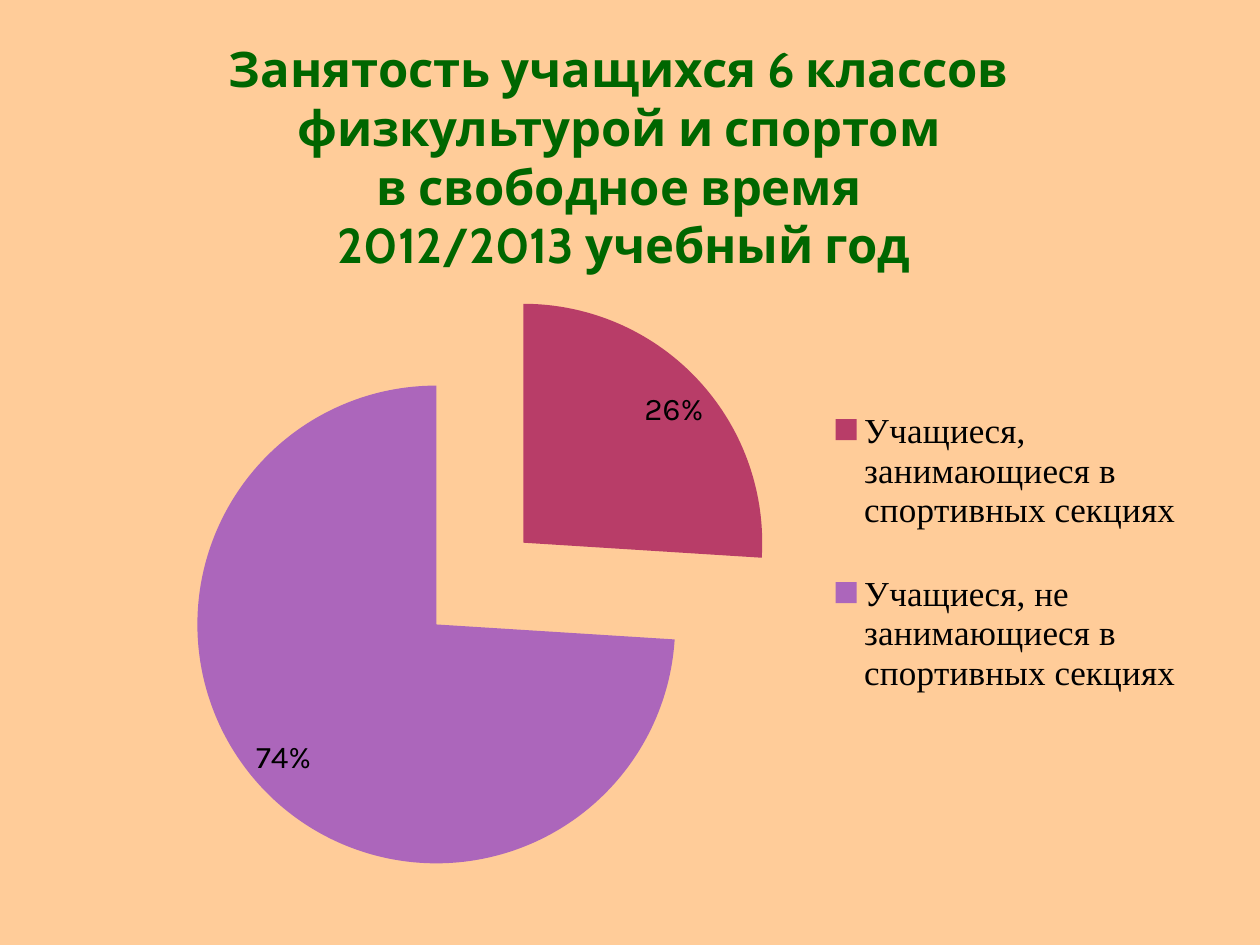
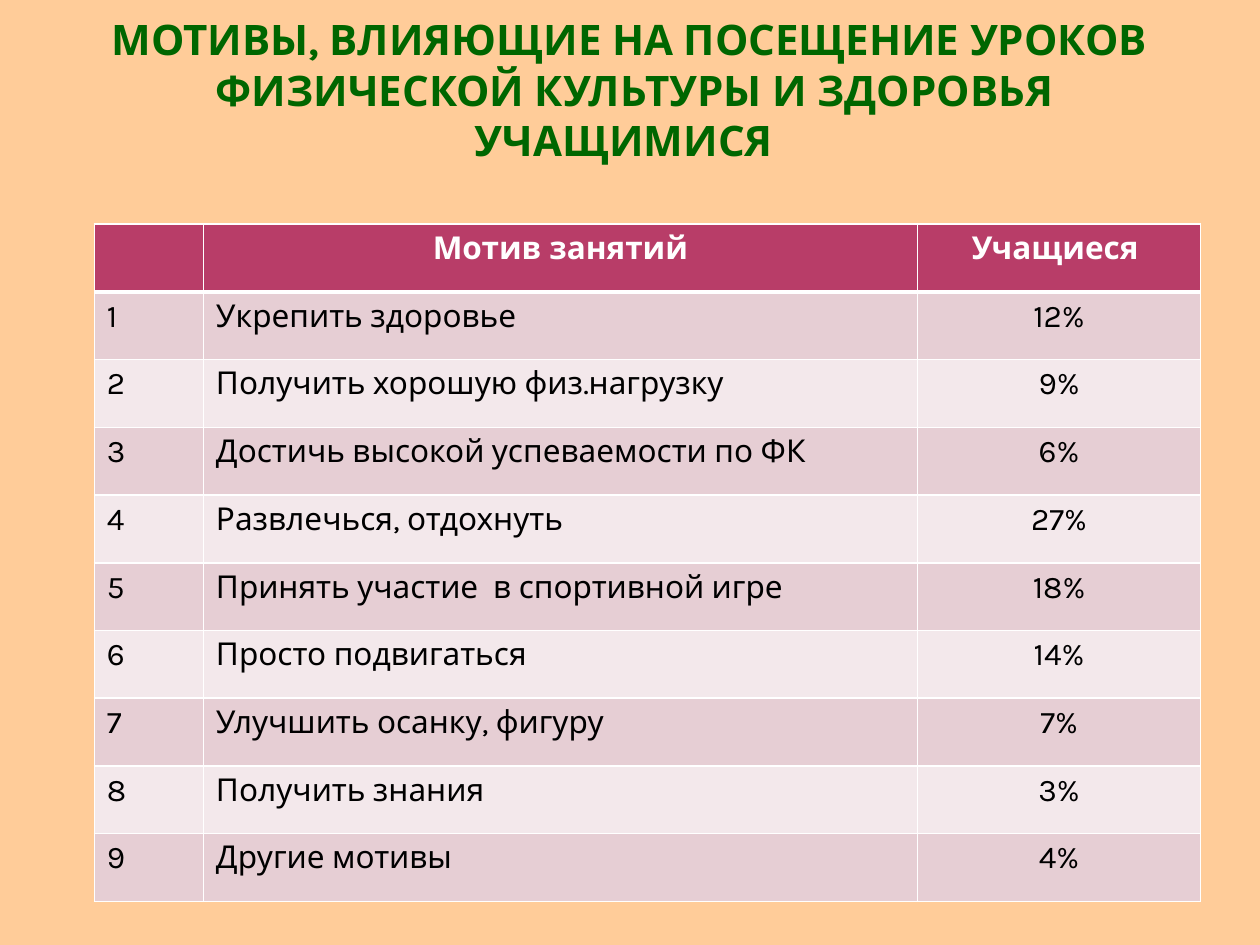
"""Build two slides on pupils' sport: a pie of participation and a table of motives."""
from lxml import etree
from pptx import Presentation
from pptx import util as u
from pptx.chart import data as chart_data
from pptx.dml import color
from pptx.enum import chart as chart_enum, text
from pptx.oxml import ns, parse_xml

COLOURS = {
    "background": "FFCC99",
    "title": "006600",
    "text": "000000",
    "white": "FFFFFF",
    "berry": "B83D68",
    "violet": "AC66BB",
    "odd_row": "E6CED4",
    "even_row": "F3E8EB",
}
RGB = {name: color.RGBColor.from_string(value) for name, value in COLOURS.items()}


def set_font(font, name, size, colour, bold=False):
    font.name = name
    font.size = u.Pt(size)
    font.bold = bold
    font.color.rgb = RGB[colour]


def add_titled_page(deck, title, top, width, height, name, size):
    page = deck.slides.add_slide(deck.slide_layouts[6])
    page.background.fill.solid()
    page.background.fill.fore_color.rgb = RGB["background"]
    box = page.shapes.add_textbox(u.Cm(1.27), u.Cm(top), u.Cm(width), u.Cm(height))
    frame = box.text_frame
    frame.word_wrap = True
    frame.vertical_anchor = text.MSO_ANCHOR.BOTTOM
    frame.margin_left = frame.margin_right = u.Cm(0.13)
    frame.margin_top = frame.margin_bottom = 0
    para = frame.paragraphs[0]
    para.text = title
    para.alignment = text.PP_ALIGN.CENTER
    set_font(para.font, name, size, "title", bold=True)
    return page


deck = Presentation()
deck.slide_width, deck.slide_height = u.Cm(25.4), u.Cm(19.05)

page = add_titled_page(
    deck,
    "Занятость учащихся 6 классов \vфизкультурой и спортом \v"
    "в свободное время \v2012/2013 учебный год",
    0.31, 22.63, 5.21, "Cabin", 28,
)
shares = chart_data.CategoryChartData(number_format="0%")
shares.categories = [
    "Учащиеся, занимающиеся в спортивных секциях",
    "Учащиеся, не занимающиеся в спортивных секциях",
]
shares.add_series("Series 1", (0.26, 0.74))
pie = page.shapes.add_chart(
    chart_enum.XL_CHART_TYPE.PIE, u.Cm(1.38), u.Cm(4.5), u.Cm(23.04), u.Cm(13.84), shares
).chart
pie.has_title = False
set_font(pie.font, "Karla", 18, "text")
pie.has_legend = True
pie.legend.position = chart_enum.XL_LEGEND_POSITION.RIGHT
pie.legend.include_in_layout = False
set_font(pie.legend.font, "Times New Roman", 20, "text")

pie.plots[0].vary_by_categories = True
series = pie.plots[0].series[0]
labels = series.data_labels
labels.show_value = True
labels.show_percentage = False
labels.number_format = "0%"
labels.number_format_is_linked = False
labels.position = chart_enum.XL_LABEL_POSITION.INSIDE_END
set_font(labels.font, "Karla", 18, "text")

layouts = []
for index, (name, shift) in enumerate((("berry", (0.01, 0.01)), ("violet", (-0.01, -0.01)))):
    point = series.points[index]
    point.format.fill.solid()
    point.format.fill.fore_color.rgb = RGB[name]
    point.format.line.fill.background()
    point.data_label.position = chart_enum.XL_LABEL_POSITION.INSIDE_END
    set_font(point.data_label.font, "Karla", 18, "text")
    label = labels._element.findall(ns.qn("c:dLbl"))[index]
    layouts.append((label, "c:idx", "", zip("xy", shift)))
explosion = etree.Element(ns.qn("c:explosion"), val="25")
series._element.find(ns.qn("c:dPt")).addprevious(explosion)

edges = '<c:xMode val="edge"/><c:yMode val="edge"/>'
plot_area = pie._chartSpace.chart.plotArea
layouts += [
    (plot_area, None, '<c:layoutTarget val="inner"/>' + edges, zip("xywh", (0.07, 0.09, 0.58, 0.87))),
    (pie.legend._element, "c:legendPos", edges, zip("xywh", (0.66, 0.21, 0.32, 0.54))),
]
for parent, previous, modes, values in layouts:
    for old_layout in parent.findall(ns.qn("c:layout")):
        parent.remove(old_layout)
    sizes = "".join(f'<c:{key} val="{value}"/>' for key, value in values)
    layout = parse_xml(
        f'<c:layout {ns.nsdecls("c")}><c:manualLayout>{modes}{sizes}</c:manualLayout></c:layout>'
    )
    if previous:
        parent.find(ns.qn(previous)).addnext(layout)
    else:
        parent.insert(0, layout)

page = add_titled_page(
    deck,
    "МОТИВЫ, ВЛИЯЮЩИЕ НА ПОСЕЩЕНИЕ УРОКОВ\v ФИЗИЧЕСКОЙ КУЛЬТУРЫ И ЗДОРОВЬЯ УЧАЩИМИСЯ ",
    0.54, 22.83, 2.79, "Karla", 24,
)
motives = [
    ("Укрепить здоровье", 12),
    ("Получить хорошую физ.нагрузку", 9),
    ("Достичь высокой успеваемости по ФК", 6),
    ("Развлечься, отдохнуть", 27),
    ("Принять участие  в спортивной игре", 18),
    ("Просто подвигаться", 14),
    ("Улучшить осанку, фигуру", 7),
    ("Получить знания", 3),
    ("Другие мотивы", 4),
]
rows = [("", "Мотив занятий", "Учащиеся ")]
rows += [(str(n), motive, f"{share}%") for n, (motive, share) in enumerate(motives, 1)]
widths = (2.2, 14.4, 5.7)
table_height = 13.65
table = page.shapes.add_table(
    len(rows), len(widths), u.Cm(1.9), u.Cm(4.52), u.Cm(sum(widths)), u.Cm(table_height)
).table
table.horz_banding = False
for column, width in zip(table.columns, widths):
    column.width = u.Cm(width)
for r, row in enumerate(rows):
    table.rows[r].height = u.Cm(table_height / len(rows))
    is_header = r == 0
    fill_name = "berry" if is_header else ("even_row", "odd_row")[r % 2]
    line_widths = {"L": 1, "R": 1, "T": 3 if r == 1 else 1, "B": 3 if is_header else 1}
    for c, value in enumerate(row):
        cell = table.cell(r, c)
        for side, points in line_widths.items():
            cell._tc.get_or_add_tcPr().append(parse_xml(
                f'<a:ln{side} {ns.nsdecls("a")} w="{u.Pt(points)}"><a:solidFill>'
                f'<a:srgbClr val="{COLOURS["white"]}"/></a:solidFill></a:ln{side}>'
            ))
        cell.fill.solid()
        cell.fill.fore_color.rgb = RGB[fill_name]
        para = cell.text_frame.paragraphs[0]
        para.text = value
        if is_header or c == 2:
            para.alignment = text.PP_ALIGN.CENTER
        set_font(para.font, "Karla", 18, "white" if is_header else "text", bold=is_header)

deck.save("out.pptx")
